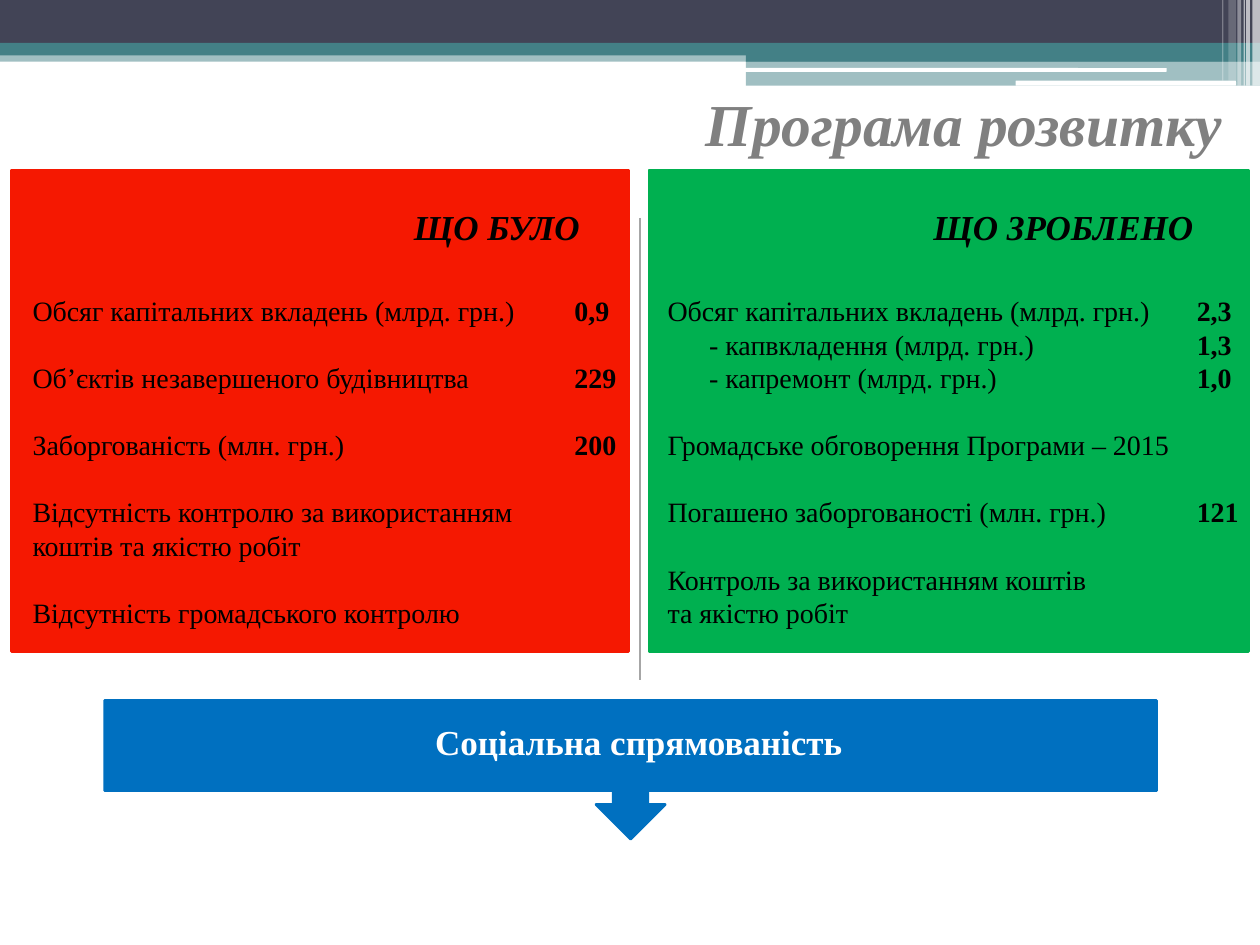
import pptx
import pptx.util
import pptx.dml.color
import pptx.enum.shapes
import pptx.enum.text
import pptx.oxml.ns
from lxml import etree

Inches, Pt = pptx.util.Inches, pptx.util.Pt
SHAPE = pptx.enum.shapes.MSO_SHAPE
ALIGN = pptx.enum.text.PP_ALIGN
ANCHOR = pptx.enum.text.MSO_ANCHOR
qn = pptx.oxml.ns.qn

FONT = "Times New Roman"
COLORS = {
    "navy": "424456", "teal": "438086", "white": "FFFFFF", "black": "000000",
    "title": "808080", "divider": "A6A6A6",
    "before": "F51801", "after": "00B050", "callout": "0070C0",
}
LINE_PITCH = Pt(19.2)

# Each row: label, value (or None), whether a blank line's gap precedes it
BEFORE_ROWS = [
    ("Обсяг капітальних вкладень (млрд. грн.)", "0,9", False),
    ("Об’єктів незавершеного будівництва", "229", True),
    ("Заборгованість (млн. грн.)", "200", True),
    ("Відсутність контролю за використанням\nкоштів та якістю робіт", None, True),
    ("Відсутність громадського контролю", None, True),
]
AFTER_ROWS = [
    ("Обсяг капітальних вкладень (млрд. грн.)", "2,3", False),
    ("\t- капвкладення (млрд. грн.)", "1,3", False),
    ("\t- капремонт (млрд. грн.)", "1,0", False),
    ("Громадське обговорення Програми – 2015", None, True),
    ("Погашено заборгованості (млн. грн.)", "121", True),
    ("Контроль за використанням коштів\nта якістю робіт", None, True),
]


def rgb(name):
    return pptx.dml.color.RGBColor.from_string(COLORS[name])


def add_block(page, box, color, kind=SHAPE.RECTANGLE, opacity=100, outlined=False):
    shape = page.shapes.add_shape(kind, *map(Inches, box))
    shape.shadow.inherit = False
    shape.fill.solid()
    shape.fill.fore_color.rgb = rgb(color)
    if opacity < 100:
        fill_color = shape.fill._xPr.find(qn("a:solidFill"))[0]
        etree.SubElement(fill_color, qn("a:alpha"), val=str(opacity * 1000))
    if outlined:
        shape.line.color.rgb = rgb(color)
        shape.line.width = Pt(1.5)
    else:
        shape.line.fill.background()
    return shape


def add_text_frame(page, box, anchor=ANCHOR.TOP):
    frame = page.shapes.add_textbox(*map(Inches, box)).text_frame
    frame.word_wrap = True
    frame.vertical_anchor = anchor
    return frame


def format_span(span, size, color, bold=False, italic=False):
    span.font.name = FONT
    span.font.size = Pt(size)
    span.font.bold = bold
    span.font.italic = italic
    span.font.color.rgb = rgb(color)


def add_heading(page, box, text, size, color, align=ALIGN.RIGHT,
                anchor=ANCHOR.BOTTOM, italic=True):
    para = add_text_frame(page, box, anchor).paragraphs[0]
    para.text = text
    para.alignment = align
    format_span(para.runs[0], size, color, bold=True, italic=italic)
    return para


def add_banner(page, box):
    left, top, width, height = box
    right = left + width
    half = left + 5.92
    # Full-width bands and the stepped right half
    for x, y, band_height, color, opacity in [
        (left, 0.4, 0.09, "teal", 50),
        (left, 0, 0.34, "navy", 100),
        (left, 0.34, 0.1, "teal", 100),
        (half, 0.39, 0.1, "teal", 100),
        (half, 0.48, 0.2, "teal", 50),
    ]:
        add_block(page, (x, top + y, right - x, band_height), color, opacity=opacity)
    # White rounded strips
    for x, y, strip_width, strip_height in [(5.91, 0.54, 3.35, 0.03),
                                            (8.06, 0.64, 1.75, 0.04)]:
        add_block(page, (left + x, top + y, strip_width, strip_height), "white",
                  SHAPE.ROUNDED_RECTANGLE)
    # Translucent stripes at the right edge
    for offset, stripe_width, drop, opacity in [
        (0.06, 0.06, 0, 65), (0.11, 0.03, 0, 65), (0.13, 0.01, 0, 60),
        (0.18, 0.03, 0, 40), (0.25, 0.06, 0.04, 20), (0.3, 0.01, 0.04, 30),
    ]:
        add_block(page, (right - offset, top, stripe_width, height - drop),
                  "white", opacity=opacity)


def set_tabs(para, stops):
    tabs = etree.SubElement(para._p.get_or_add_pPr(), qn("a:tabLst"))
    for stop in stops:
        etree.SubElement(tabs, qn("a:tab"), pos=str(Inches(stop)), algn="l")


def add_panel(page, box, color, heading, heading_left, rows, text_left, value_tab):
    left, top, width, height = box
    add_block(page, box, color, outlined=True)
    add_heading(page, (left + heading_left, top + 0.22, 3.9, 0.44), heading, 20, "black")
    frame = add_text_frame(page, (left + text_left, top + 0.93, width + 0.08, 2.79))
    for index, (label, value, gap) in enumerate(rows):
        para = frame.paragraphs[0] if index == 0 else frame.add_paragraph()
        para.text = label
        para.line_spacing = LINE_PITCH
        para.space_before = LINE_PITCH if gap else Pt(0)
        set_tabs(para, (0.33, value_tab))
        for span in para.runs:
            format_span(span, 16, "black")
        if value:
            span = para.add_run()
            span.text = "\t" + value
            format_span(span, 16, "black", bold=True)


def add_divider(page, x, top, bottom):
    line = page.shapes.add_connector(
        pptx.enum.shapes.MSO_CONNECTOR.STRAIGHT,
        Inches(x), Inches(top), Inches(x), Inches(bottom))
    line.line.color.rgb = rgb("divider")
    line.line.width = Pt(0.75)
    etree.SubElement(line._element.spPr, qn("a:effectLst"))


def add_callout(page, box, text):
    left, top, width, height = box
    add_block(page, box, "callout", SHAPE.DOWN_ARROW_CALLOUT, outlined=True)
    para = add_heading(page, (left - 0.29, top + 0.15, width + 0.71, 0.4), text, 20,
                       "white", ALIGN.CENTER, ANCHOR.TOP, italic=False)
    para.line_spacing = 0.9


def main():
    deck = pptx.Presentation()
    deck.slide_width, deck.slide_height = Inches(10), Inches(7.5)
    page = deck.slides.add_slide(deck.slide_layouts[6])
    add_banner(page, (0, 0, 10, 0.68))
    add_heading(page, (0.35, 0.64, 9.45, 0.67), "Програма розвитку", 34, "title")
    add_panel(page, (5.15, 1.35, 4.76, 3.82), "after", "ЩО ЗРОБЛЕНО", 0.52,
              AFTER_ROWS, 0.05, 4.2)
    add_panel(page, (0.09, 1.35, 4.9, 3.82), "before", "ЩО БУЛО ", 0.78,
              BEFORE_ROWS, 0.07, 4.3)
    add_divider(page, 5.08, 1.73, 5.4)
    add_callout(page, (0.83, 5.56, 8.35, 1.1), "Соціальна спрямованість")
    deck.save("out.pptx")


if __name__ == "__main__":
    main()
